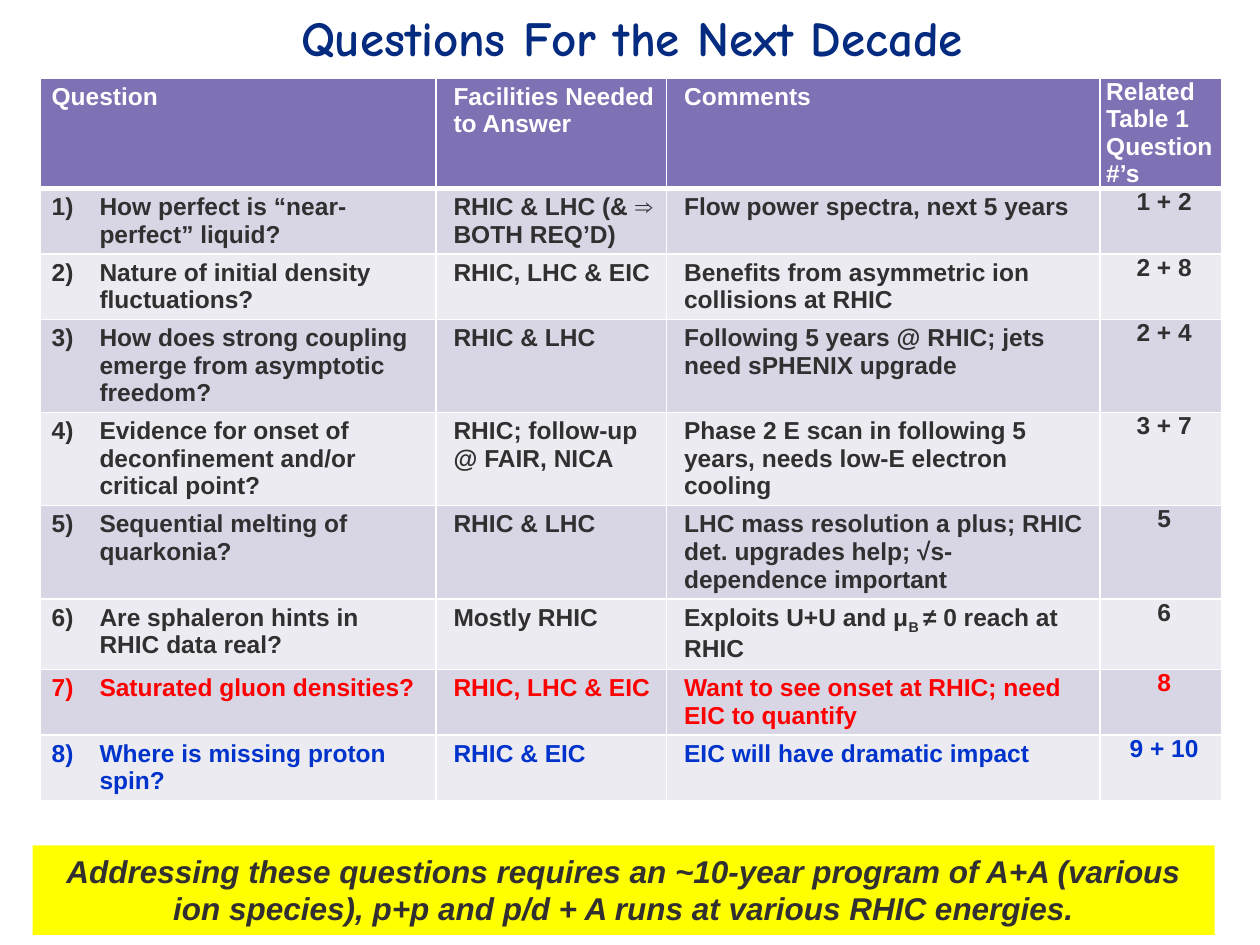
from dataclasses import dataclass

import pptx
import pptx.dml.color
import pptx.enum.shapes
import pptx.enum.text
import pptx.oxml
import pptx.oxml.ns
import pptx.util
from pptx.util import Inches

COLORS = {
    "white": "FFFFFF", "header": "8071B4", "odd": "D8D5E5", "even": "EDEBF2",
    "text": "322F31", "red": "FF0000", "blue": "0033CC",
    "title": "042B7F", "banner": "FFFF00",
}
COLUMN_WIDTHS = (3.14, 1.83, 3.44, 0.97)
HEADER_HEIGHT = 0.87
HEADERS = ("Question", "Facilities Needed to Answer", "Comments",
           "Related Table 1 Question #’s")
CENTER = pptx.enum.text.PP_ALIGN.CENTER


@dataclass
class Question:
    question: str
    facilities: str
    comments: tuple[str, ...]  # every second part is a subscript
    related: str
    height: float = 0.52
    color: str = "text"


QUESTIONS = (
    Question("How perfect is “near-perfect” liquid?", "RHIC & LHC (& ⇒ BOTH REQ’D)",
             ("Flow power spectra, next 5 years",), "1 + 2"),
    Question("Nature of initial density fluctuations?", "RHIC, LHC & EIC",
             ("Benefits from asymmetric ion collisions at RHIC",), "2 + 8"),
    Question("How does strong coupling emerge from asymptotic freedom?", "RHIC & LHC",
             ("Following 5 years @ RHIC; jets need sPHENIX upgrade",), "2 + 4", 0.74),
    Question("Evidence for onset of deconfinement and/or critical point?",
             "RHIC; follow-up @ FAIR, NICA",
             ("Phase 2 E scan in following 5 years, needs low-E electron cooling",),
             "3 + 7", 0.74),
    Question("Sequential melting of quarkonia?", "RHIC & LHC",
             ("LHC mass resolution a plus; RHIC det. upgrades help; "
              "√s-dependence important",), "5", 0.74),
    Question("Are sphaleron hints in RHIC data real?", "Mostly RHIC",
             ("Exploits U+U and μ", "B ", "≠ 0 reach at RHIC"), "6", 0.56),
    Question("Saturated gluon densities?", "RHIC, LHC & EIC",
             ("Want to see onset at RHIC; need EIC to quantify",), "8", color="red"),
    Question("Where is missing proton spin?", "RHIC & EIC",
             ("EIC will have dramatic impact",), "9 + 10", color="blue"),
)


def rgb(name: str) -> pptx.dml.color.RGBColor:
    return pptx.dml.color.RGBColor.from_string(COLORS[name])


def add_run(paragraph, text: str, size: float, color: str,
            font: str = "Arial", italic: bool = False):
    run = paragraph.add_run()
    run.text = text
    run.font.name = font
    run.font.size = pptx.util.Pt(size)
    run.font.bold = True
    run.font.italic = italic
    run.font.color.rgb = rgb(color)
    return run


def set_indent(paragraph, left: float, first: float = 0) -> None:
    properties = paragraph._p.get_or_add_pPr()
    properties.set("marL", str(Inches(left)))
    properties.set("indent", str(Inches(first)))


def add_number(paragraph, start: int) -> None:
    paragraph._p.get_or_add_pPr().append(pptx.oxml.parse_xml(
        f'<a:buAutoNum {pptx.oxml.ns.nsdecls("a")} type="arabicParenR" startAt="{start}"/>'))


def add_borders(cell, top: float, bottom: float) -> None:
    for side, points in (("L", 1), ("R", 1), ("T", top), ("B", bottom)):
        cell._tc.get_or_add_tcPr().append(pptx.oxml.parse_xml(
            f'<a:ln{side} {pptx.oxml.ns.nsdecls("a")} w="{pptx.util.Pt(points)}">'
            f'<a:solidFill><a:srgbClr val="{COLORS["white"]}"/></a:solidFill>'
            f'</a:ln{side}>'))


def fill_cell(table, row: int, column: int, parts: tuple[str, ...], color: str) -> None:
    cell = table.cell(row, column)
    add_borders(cell, top=3 if row == 1 else 1, bottom=3 if row == 0 else 1)
    cell.fill.solid()
    cell.fill.fore_color.rgb = rgb("header" if row == 0 else "odd" if row % 2 else "even")

    is_last = column == len(COLUMN_WIDTHS) - 1
    cell.margin_left = cell.margin_right = Inches(0 if is_last else 0.09)
    cell.margin_top = cell.margin_bottom = Inches(0 if is_last else 0.04)

    paragraph = cell.text_frame.paragraphs[0]
    if column > 0:
        set_indent(paragraph, 0.05)
    elif row > 0:
        set_indent(paragraph, 0.38, -0.38)
        add_number(paragraph, row)
    if is_last and row > 0:
        paragraph.alignment = CENTER
    for index, part in enumerate(parts):
        run = add_run(paragraph, part, 14, color)
        if index % 2:
            run.font._element.set("baseline", "-25000")


def add_title(slide) -> None:
    title = slide.shapes.title
    title.left, title.top = Inches(0.43), Inches(0.02)
    title.width, title.height = Inches(9.17), Inches(0.63)
    title.text_frame.word_wrap = True
    title.text_frame.vertical_anchor = pptx.enum.text.MSO_ANCHOR.MIDDLE
    paragraph = title.text_frame.paragraphs[0]
    paragraph.alignment = CENTER
    paragraph.line_spacing = 0.8
    add_run(paragraph, "Questions For the Next Decade", 28, "title", "Comic Neue")


def add_question_table(slide) -> None:
    heights = (HEADER_HEIGHT, *(question.height for question in QUESTIONS))
    table = slide.shapes.add_table(
        len(heights), len(COLUMN_WIDTHS), Inches(0.32), Inches(0.62),
        Inches(sum(COLUMN_WIDTHS)), Inches(sum(heights))).table
    for column, width in zip(table.columns, COLUMN_WIDTHS):
        column.width = Inches(width)
    for row, height in zip(table.rows, heights):
        row.height = Inches(height)

    for column, header in enumerate(HEADERS):
        fill_cell(table, 0, column, (header,), "white")
    for row, question in enumerate(QUESTIONS, start=1):
        contents = ((question.question,), (question.facilities,),
                    question.comments, (question.related,))
        for column, parts in enumerate(contents):
            fill_cell(table, row, column, parts, question.color)


def add_banner(slide) -> None:
    banner = slide.shapes.add_shape(
        pptx.enum.shapes.MSO_SHAPE.RECTANGLE,
        Inches(0.26), Inches(6.71), Inches(9.38), Inches(0.71))
    banner.shadow.inherit = False
    banner.fill.solid()
    banner.fill.fore_color.rgb = rgb("banner")
    banner.line.fill.background()
    banner.text_frame.word_wrap = True
    banner.text_frame.vertical_anchor = pptx.enum.text.MSO_ANCHOR.TOP
    paragraph = banner.text_frame.paragraphs[0]
    paragraph.alignment = CENTER
    add_run(paragraph, "Addressing these questions requires an ~10-year program of A+A "
            "(various ion species), p+p and p/d + A runs at various RHIC energies.",
            18, "text", italic=True)


def main() -> None:
    presentation = pptx.Presentation()
    presentation.slide_width, presentation.slide_height = Inches(10), Inches(7.5)
    slide = presentation.slides.add_slide(presentation.slide_layouts[5])  # title only
    add_title(slide)
    add_question_table(slide)
    add_banner(slide)
    presentation.save("out.pptx")


if __name__ == "__main__":
    main()
